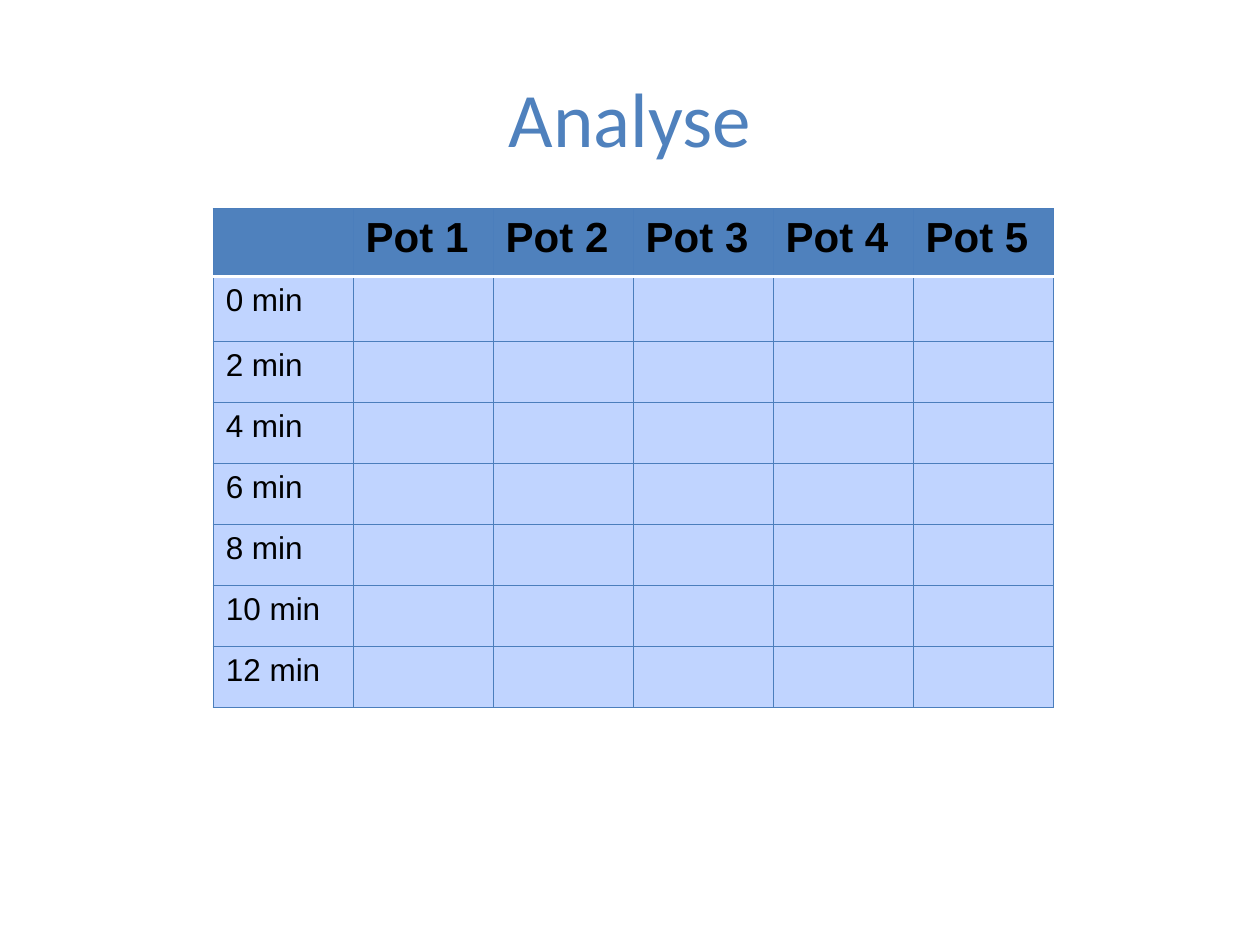
from lxml.etree import SubElement
from pptx import Presentation
from pptx.dml.color import RGBColor
from pptx.enum.text import MSO_ANCHOR, PP_ALIGN
from pptx.oxml.ns import qn
from pptx.util import Pt

COLORS = {
    "title": "4F81BD",
    "header": "4F81BD",
    "body": "C0D4FF",
    "grid": "4B7EBC",
    "divider": "FFFFFF",
    "text": "000000",
}


def set_font(para, name, size, color, bold=False):
    para.font.name = name
    para.font.size = Pt(size)
    para.font.bold = bold
    para.font.color.rgb = RGBColor.from_string(COLORS[color])


def add_border(cell, side, color, width):
    line = SubElement(cell._tc.get_or_add_tcPr(), qn(f"a:ln{side}"), w=str(Pt(width)))
    fill = SubElement(line, qn("a:solidFill"))
    SubElement(fill, qn("a:srgbClr"), val=COLORS[color])


deck = Presentation()
deck.slide_width, deck.slide_height = Pt(720), Pt(540)
slide = deck.slides.add_slide(deck.slide_layouts[6])

title = slide.shapes.add_textbox(Pt(36), Pt(21.6), Pt(648), Pt(90))
title.text_frame.word_wrap = True
title.text_frame.vertical_anchor = MSO_ANCHOR.MIDDLE
title_para = title.text_frame.paragraphs[0]
title_para.text = "Analyse"
title_para.alignment = PP_ALIGN.CENTER
set_font(title_para, "Calibri", 44, "title")

headers = [""] + [f"Pot {number}" for number in range(1, 6)]
times = [f"{minutes} min" for minutes in range(0, 13, 2)]
row_heights = [38.9, 37.1] + [34.85] * 6

frame = slide.shapes.add_table(
    len(row_heights), len(headers), Pt(121.8), Pt(119.2), Pt(480), Pt(sum(row_heights))
)
table = frame.table
for column in table.columns:
    column.width = Pt(80)

for row_index, height in enumerate(row_heights):
    table.rows[row_index].height = Pt(height)
    is_header = row_index == 0
    texts = headers if is_header else [times[row_index - 1]] + [""] * 5
    for column_index, text in enumerate(texts):
        cell = table.cell(row_index, column_index)
        para = cell.text_frame.paragraphs[0]
        if text:
            para.text = text
        set_font(para, "Arial", 24 if is_header else 18, "text", is_header)
        for side in "LRTB":
            on_divider = (row_index, side) in [(0, "B"), (1, "T")]
            add_border(cell, side, *(("divider", 2) if on_divider else ("grid", 0.75)))
        cell.fill.solid()
        fill_color = COLORS["header" if is_header else "body"]
        cell.fill.fore_color.rgb = RGBColor.from_string(fill_color)

deck.save("out.pptx")
